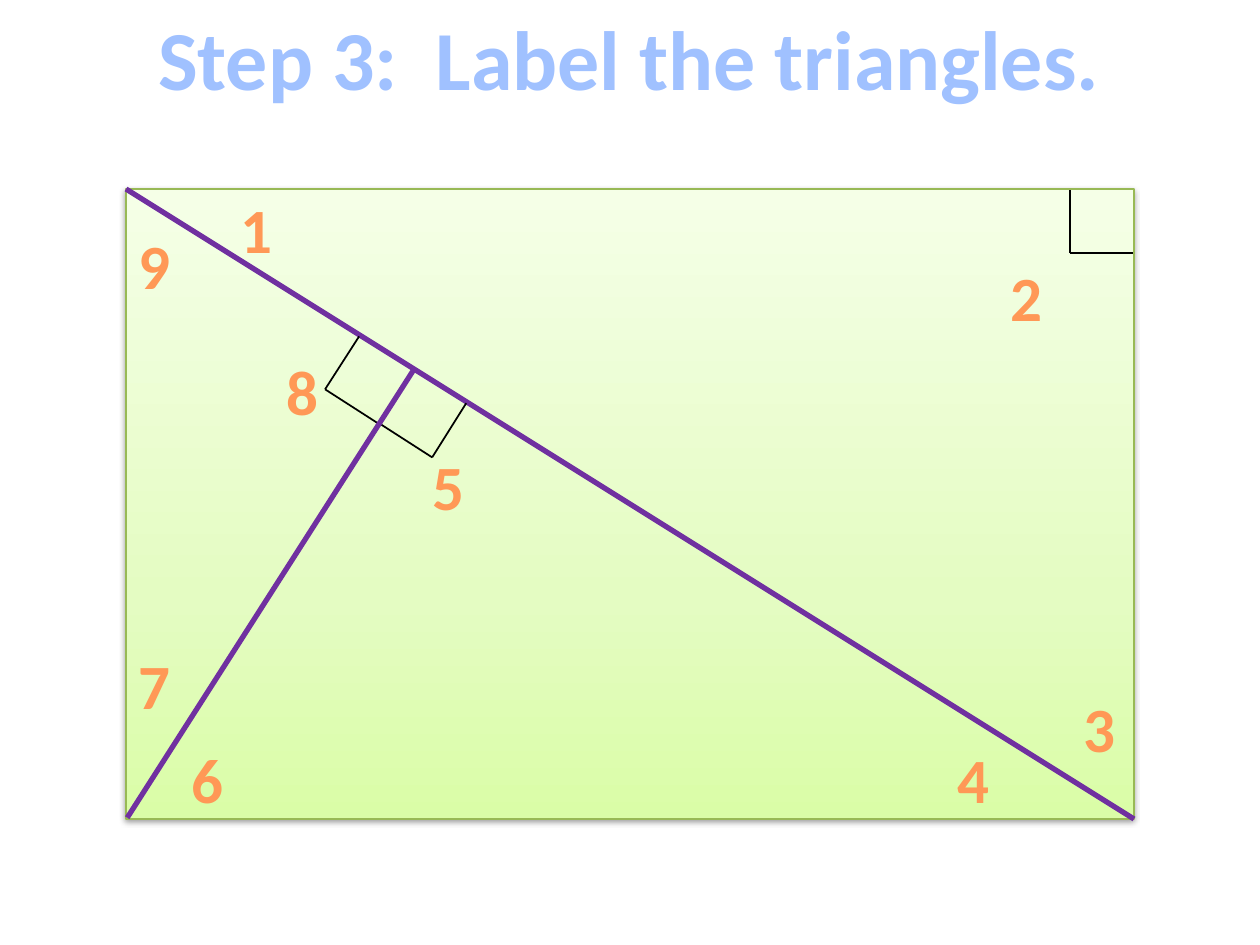
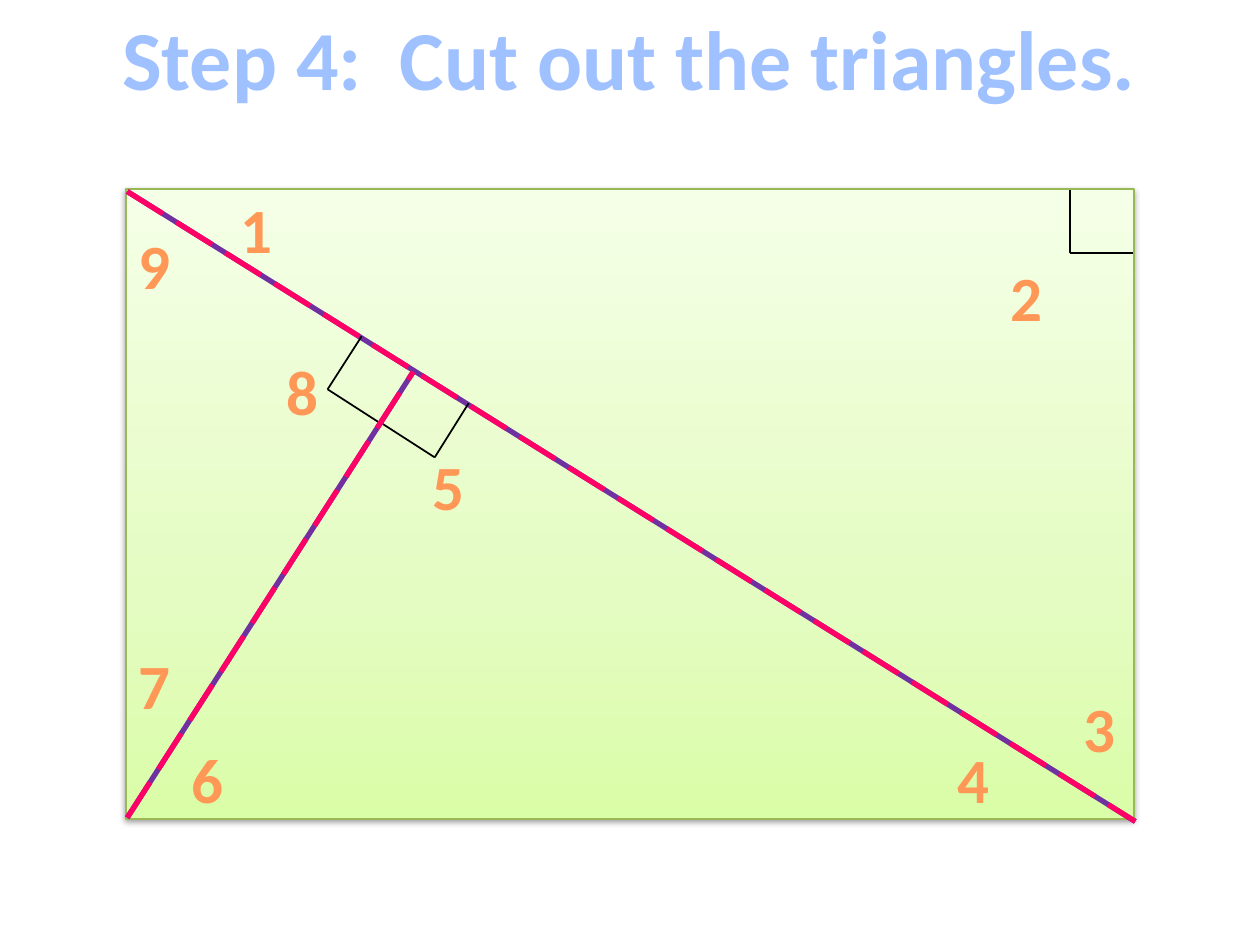
"""Build two slides that label and cut the triangles of a divided rectangle."""
from lxml.etree import SubElement
from pptx import Presentation
from pptx.dml.color import RGBColor
from pptx.enum.dml import MSO_LINE
from pptx.enum.shapes import MSO_CONNECTOR, MSO_SHAPE
from pptx.enum.text import MSO_AUTO_SIZE, PP_ALIGN
from pptx.oxml.ns import qn
from pptx.util import Pt

EMU_PER_PX = 9144
SLIDE_WIDTH, SLIDE_HEIGHT = 1000, 750

BLACK = RGBColor(0x00, 0x00, 0x00)
PURPLE = RGBColor(0x70, 0x30, 0xA0)
PINK = RGBColor(0xFF, 0x00, 0x66)
GREEN = RGBColor(0x98, 0xB9, 0x55)
TITLE_OUTLINE = RGBColor(0x46, 0x7A, 0xB8)
PALE_BLUE = RGBColor(0xBF, 0xD3, 0xF9)
LIGHT_BLUE = RGBColor(0xA0, 0xC1, 0xFF)
NAVY = RGBColor(0x00, 0x3D, 0x85)

PAPER_GRADIENT = [(0, RGBColor(0xDA, 0xFD, 0xA7)), (35, RGBColor(0xE4, 0xFC, 0xC2)),
                  (100, RGBColor(0xF5, 0xFF, 0xE7))]
TITLE_GRADIENT = [(0, PALE_BLUE), (9, LIGHT_BLUE), (50, NAVY), (79, LIGHT_BLUE),
                  (100, PALE_BLUE)]
LABEL_GRADIENT = [(0, RGBColor(0x9D, 0x47, 0x00)), (78, RGBColor(0xFF, 0x98, 0x56)),
                  (100, RGBColor(0xFF, 0xF5, 0xF1))]

TITLE_FORMAT = {"name": "Calibri", "size": Pt(48), "bold": True}
LABEL_FORMAT = {"name": "Calibri", "size": Pt(36), "bold": True}
MARK_LINE = {"width": Pt(1)}
FOLD_LINE = {"width": Pt(3)}
CUT_LINE = {"width": Pt(3), "dash_style": MSO_LINE.LONG_DASH}

PAPER = (100, 150, 800, 500)
TITLE_HEIGHT = 91
LABEL_SIZE = (46, 71)
LABELS = {
    "1": (181, 146), "2": (792, 200), "3": (850, 542),
    "4": (750, 583), "5": (333, 350), "6": (142, 583),
    "7": (100, 508), "8": (217, 275), "9": (100, 175),
}
CORNER_MARK = [(899, 201), (849, 201), (849, 151)]
ALTITUDE_MARKS = [
    [(300, 336), (258, 309), (285, 267)],
    [(370, 320), (343, 363), (301, 336)],
]
STEPS = [
    {"title": "Step 3:  Label the triangles.", "title_width": 775,
     "diagonal": [(100, 150), (900, 650)], "altitude": [(101, 649), (328, 294)],
     "mark_shift": 0, "cut": False},
    {"title": "Step 4:  Cut out the triangles.", "title_width": 833,
     "diagonal": [(101, 152), (901, 652)], "altitude": [(101, 649), (328, 295)],
     "mark_shift": 2, "cut": True},
]


def emu(*lengths):
    return [length * EMU_PER_PX for length in lengths]


def apply_format(target, values):
    for name, value in values.items():
        setattr(target, name, value)


def add_color(parent, color):
    return SubElement(parent, qn("a:srgbClr"), val=str(color))


def set_gradient(fill, element, stops, angle):
    fill.gradient()
    fill.gradient_angle = angle
    stop_list = element.xpath(".//a:gsLst")[0]
    for stop in list(stop_list):
        stop_list.remove(stop)
    for percent, color in stops:
        add_color(SubElement(stop_list, qn("a:gs"), pos=str(percent * 1000)), color)


def add_line(shapes, start, end, color, values):
    connector = shapes.add_connector(MSO_CONNECTOR.STRAIGHT, *emu(*start, *end))
    connector.line.color.rgb = color
    apply_format(connector.line, values)
    SubElement(connector._element.spPr, qn("a:effectLst"))


def add_mark(slide, points, shift=0):
    group = slide.shapes.add_group_shape()
    shifted = [(x + shift, y) for x, y in points]
    for start, end in zip(shifted, shifted[1:]):
        add_line(group.shapes, start, end, BLACK, MARK_LINE)


def add_fold(slide, ends, cut):
    add_line(slide.shapes, *ends, PURPLE, FOLD_LINE)
    if cut:
        add_line(slide.shapes, *ends, PINK, CUT_LINE)


def add_text(slide, text, box, values, stops):
    frame = slide.shapes.add_textbox(*emu(*box)).text_frame
    apply_format(frame, {"word_wrap": False, "auto_size": MSO_AUTO_SIZE.SHAPE_TO_FIT_TEXT})
    paragraph = frame.paragraphs[0]
    paragraph.alignment = PP_ALIGN.CENTER
    run = paragraph.add_run()
    run.text = text
    apply_format(run.font, values)
    set_gradient(run.font.fill, run._r, stops, 270)
    return run


def add_title(slide, text, width):
    box = ((SLIDE_WIDTH - width) // 2, 0, width, TITLE_HEIGHT)
    run = add_text(slide, text, box, TITLE_FORMAT, TITLE_GRADIENT)
    properties = run._r.get_or_add_rPr()
    outline = SubElement(properties, qn("a:ln"), w=str(Pt(0.83)))
    add_color(SubElement(outline, qn("a:solidFill")), TITLE_OUTLINE)
    properties.insert(0, outline)


def add_paper(slide):
    paper = slide.shapes.add_shape(MSO_SHAPE.RECTANGLE, *emu(*PAPER))
    set_gradient(paper.fill, paper._element.spPr, PAPER_GRADIENT, 90)
    paper.line.color.rgb = GREEN
    paper.line.width = Pt(0.75)
    paper.shadow.inherit = False
    effects = paper._element.spPr.find(qn("a:effectLst"))
    shadow = SubElement(effects, qn("a:outerShdw"), blurRad=str(Pt(3.1)),
                        dist=str(Pt(1.6)), dir="5400000", rotWithShape="0")
    SubElement(add_color(shadow, BLACK), qn("a:alpha"), val="38000")


def add_step(presentation, step):
    slide = presentation.slides.add_slide(presentation.slide_layouts[6])
    add_paper(slide)
    add_fold(slide, step["diagonal"], step["cut"])
    add_mark(slide, CORNER_MARK)
    for points in ALTITUDE_MARKS:
        add_mark(slide, points, step["mark_shift"])
    add_fold(slide, step["altitude"], step["cut"])
    add_title(slide, step["title"], step["title_width"])
    for label, position in LABELS.items():
        add_text(slide, label, position + LABEL_SIZE, LABEL_FORMAT, LABEL_GRADIENT)


def main():
    presentation = Presentation()
    presentation.slide_width, presentation.slide_height = emu(SLIDE_WIDTH, SLIDE_HEIGHT)
    for step in STEPS:
        add_step(presentation, step)
    presentation.save("out.pptx")


if __name__ == "__main__":
    main()
